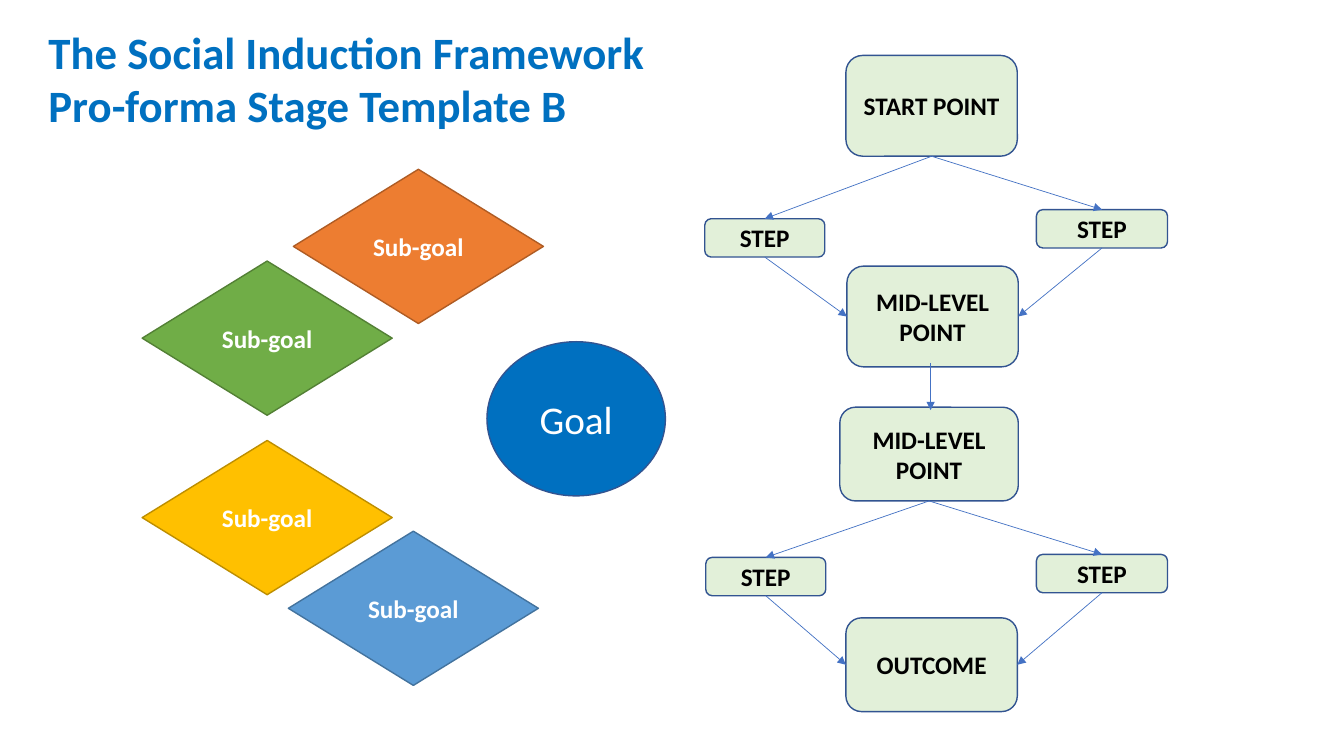
from lxml import etree
from pptx import Presentation
from pptx.dml.color import RGBColor
from pptx.enum import shapes as kinds, text as txt
from pptx.oxml import ns
from pptx.util import Inches, Pt

INK = {
    "blue": "0070C0", "navy": "325491", "pale": "E2F0D9", "black": "000000",
    "white": "FFFFFF", "arrow": "4472C4", "gold": "FFC000", "bronze": "BD8E00",
    "green": "70AD47", "moss": "538035", "sky": "5B9BD5", "steel": "43739E",
    "orange": "ED7D31", "rust": "AF5C24",
}
KIND = kinds.MSO_SHAPE


def ink(name):
    """Return the named colour."""
    return RGBColor.from_string(INK[name])


def write(shape, words, size=18, color="black", bold=True, align="CENTER",
          anchor="MIDDLE", wrap=True):
    """Put formatted text in a shape, one paragraph per line."""
    frame = shape.text_frame
    frame.text = words
    frame.word_wrap = wrap
    frame.vertical_anchor = txt.MSO_ANCHOR[anchor]
    for para in frame.paragraphs:
        para.alignment = txt.PP_ALIGN[align]
        for run in para.runs:
            font = run.font
            font.name, font.size, font.bold = "Calibri", Pt(size), bold
            font.color.rgb = ink(color)


def node(parts, kind, words, box, fill, line, **form):
    """Add a filled, outlined shape with text."""
    shape = parts.add_shape(kind, *map(Inches, box))
    shape.shadow.inherit = False
    shape.fill.solid()
    shape.fill.fore_color.rgb = ink(fill)
    shape.line.color.rgb = ink(line)
    shape.line.width = Pt(1)
    write(shape, words, **form)
    return shape


def arrow(parts, start=(0, 0), end=(0, 0)):
    """Add a thin straight arrow."""
    line = parts.add_connector(kinds.MSO_CONNECTOR.STRAIGHT,
                               *map(Inches, (*start, *end)))
    line.line.color.rgb = ink("arrow")
    line.line.width = Pt(0.5)
    tail = etree.SubElement(line.line._get_or_add_ln(), ns.qn("a:tailEnd"))
    tail.set("type", "triangle")
    etree.SubElement(line._element.spPr, ns.qn("a:effectLst"))
    return line


def join(parts, first, side, last, port):
    """Join two shapes with an arrow."""
    line = arrow(parts)
    line.begin_connect(first, side)
    line.end_connect(last, port)


def heading(slide, left, top, wide, high):
    """Place the slide title."""
    title = slide.shapes.title
    title.left, title.top, title.width, title.height = map(
        Inches, (left, top, wide, high))
    write(title, "The Social Induction Framework\nPro-forma Stage Template B",
          size=32, color="blue", align="LEFT", anchor="TOP", wrap=False)
    title.text_frame.auto_size = txt.MSO_AUTO_SIZE.SHAPE_TO_FIT_TEXT


def goals(slide, left, top):
    """Draw the sub-goals around the goal."""
    parts = slide.shapes.add_group_shape().shapes
    for x, y, fill, line in (
        (0, 2.69, "gold", "bronze"),
        (0, 0.91, "green", "moss"),
        (1.45, 3.59, "sky", "steel"),
        (1.5, 0, "orange", "rust"),
    ):
        node(parts, KIND.DIAMOND, "Sub-goal", (left + x, top + y, 2.48, 1.53),
             fill, line, color="white")
    node(parts, KIND.OVAL, "Goal", (left + 3.42, top + 1.71, 1.77, 1.53),
         "blue", "navy", size=28, color="white", bold=False)


def flow(slide, left, top):
    """Draw the two branching stages and their arrows."""
    parts = slide.shapes
    cells = (
        ("START POINT", 1.4, 0, 1.7, 1),
        ("STEP", 0, 1.62, 1.19, 0.38),
        ("STEP", 3.29, 1.53, 1.3, 0.38),
        ("MID-LEVEL POINT", 1.41, 2.09, 1.7, 1),
        ("MID-LEVEL POINT", 1.34, 3.49, 1.77, 0.93),
        ("STEP", 0.01, 4.98, 1.19, 0.38),
        ("STEP", 3.29, 4.95, 1.3, 0.38),
        ("OUTCOME", 1.4, 5.58, 1.7, 0.93),
    )
    nodes = [
        node(parts, KIND.ROUNDED_RECTANGLE, words,
             (left + x, top + y, wide, high), "pale", "navy")
        for words, x, y, wide, high in cells
    ]
    for head, near, far, foot in (nodes[:4], nodes[4:]):
        for step, port in ((near, 1), (far, 3)):
            join(parts, head, 2, step, 0)
            join(parts, step, 2, foot, port)
    arrow(parts, (left + 2.24, top + 3.05), (left + 2.24, top + 3.52))


def main():
    """Build and save the slide."""
    deck = Presentation()
    deck.slide_width, deck.slide_height = Inches(13.33), Inches(7.5)
    slide = deck.slides.add_slide(deck.slide_layouts[5])
    heading(slide, 0.38, 0.19, 6.17, 1.18)
    flow(slide, 6.99, 0.55)
    goals(slide, 1.41, 1.68)
    deck.save("out.pptx")


if __name__ == "__main__":
    main()
